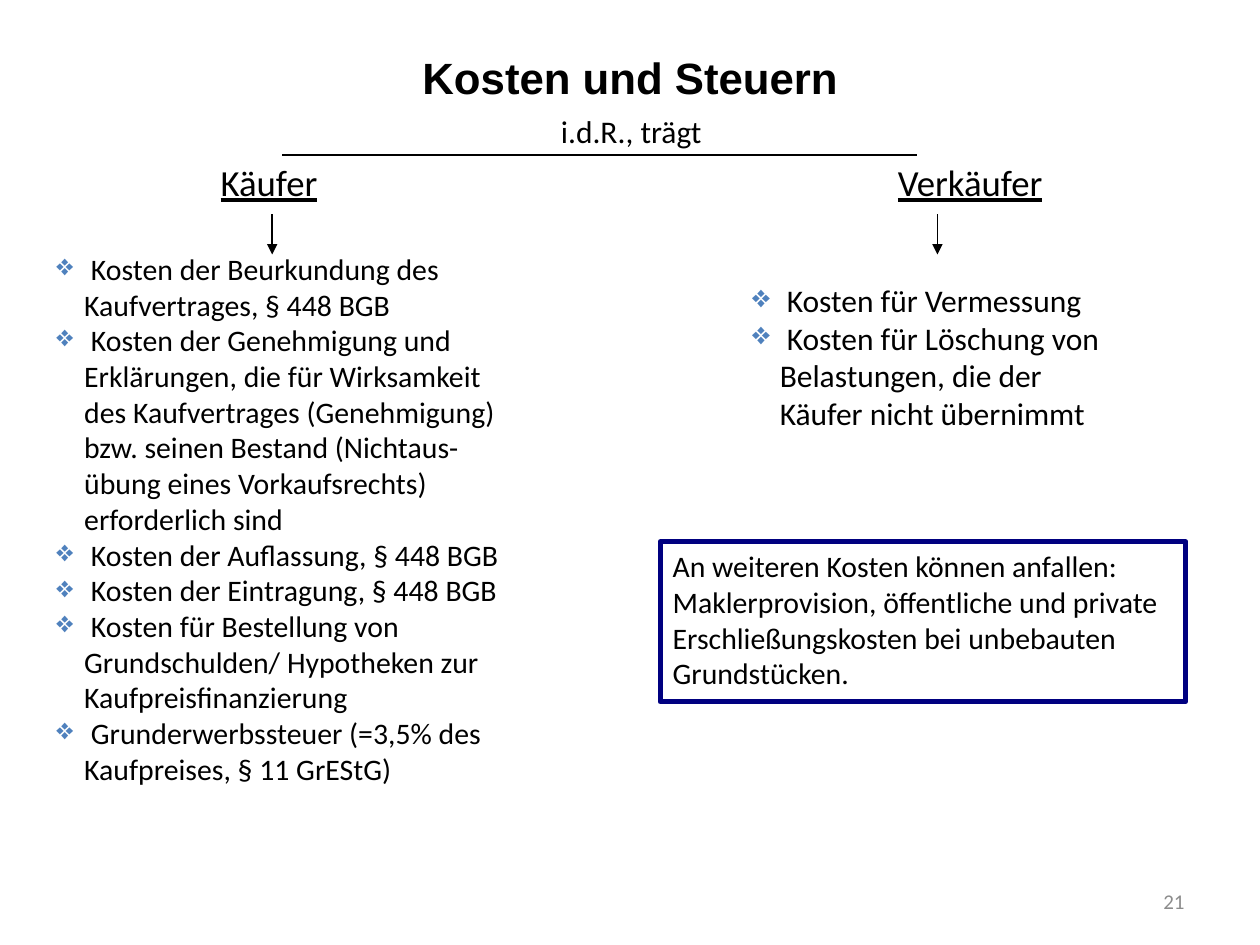
from lxml.etree import SubElement
from pptx import Presentation
from pptx.dml.color import RGBColor
from pptx.enum.shapes import MSO_CONNECTOR, MSO_SHAPE
from pptx.enum.text import MSO_ANCHOR, PP_ALIGN
from pptx.oxml.ns import qn
from pptx.util import Inches, Pt

COLORS = {"ink": "000000", "bullet": "4F81BD", "frame": "000080", "number": "8C8C8C"}
COLUMNS, ROWS = 100, 75

BUYER_COSTS = [
    ["Kosten der Beurkundung des", "Kaufvertrages, § 448 BGB"],
    ["Kosten der Genehmigung und", "Erklärungen, die für Wirksamkeit",
     "des Kaufvertrages (Genehmigung)", "bzw. seinen Bestand (Nichtaus-",
     "übung eines Vorkaufsrechts)", "erforderlich sind"],
    ["Kosten der Auflassung, § 448 BGB"],
    ["Kosten der Eintragung, § 448 BGB"],
    ["Kosten für Bestellung von", "Grundschulden/ Hypotheken zur",
     "Kaufpreisfinanzierung"],
    ["Grunderwerbssteuer (=3,5% des", "Kaufpreises, § 11 GrEStG)"],
]
SELLER_COSTS = [
    ["Kosten für Vermessung"],
    ["Kosten für Löschung von", "Belastungen, die der", "Käufer nicht übernimmt"],
]
FURTHER_COSTS = (
    "An weiteren Kosten können anfallen: Maklerprovision, öffentliche und private "
    "Erschließungskosten bei unbebauten Grundstücken."
)


class CostSlide:
    font = "Calibri"
    indent = Inches(0.22)

    def __init__(self, deck):
        self.column = deck.slide_width / COLUMNS
        self.row = deck.slide_height / ROWS
        self.shapes = deck.slides.add_slide(deck.slide_layouts[6]).shapes

    def place(self, left, top, width, height):
        return (round(left * self.column), round(top * self.row),
                round(width * self.column), round(height * self.row))

    def style(self, paragraph, size, color="ink", font=None, bold=False, underline=False):
        paragraph.font.name = font or self.font
        paragraph.font.size = Pt(size)
        paragraph.font.bold = bold
        paragraph.font.underline = underline
        paragraph.font.color.rgb = RGBColor.from_string(COLORS[color])

    def text(self, words, area, size, align=PP_ALIGN.CENTER, **look):
        frame = self.shapes.add_textbox(*self.place(*area)).text_frame
        frame.word_wrap = True
        frame.vertical_anchor = MSO_ANCHOR.MIDDLE
        paragraph = frame.paragraphs[0]
        paragraph.text = words
        paragraph.alignment = align
        self.style(paragraph, size, **look)

    def bullets(self, items, area, size):
        frame = self.shapes.add_textbox(*self.place(*area)).text_frame
        frame.word_wrap = True
        for index, lines in enumerate(items):
            paragraph = frame.add_paragraph() if index else frame.paragraphs[0]
            paragraph.text = " " + "\v".join(lines)
            self.style(paragraph, size)
            properties = paragraph._p.get_or_add_pPr()
            properties.set("marL", str(self.indent))
            properties.set("indent", str(-self.indent))
            bullet_color = SubElement(properties, qn("a:buClr"))
            SubElement(bullet_color, qn("a:srgbClr"), val=COLORS["bullet"])
            SubElement(properties, qn("a:buChar"), char="❖")
            properties.append(properties.find(qn("a:defRPr")))

    def line(self, start, end, arrow=False):
        x1, y1, x2, y2 = self.place(*start, *end)
        connector = self.shapes.add_connector(MSO_CONNECTOR.STRAIGHT, x1, y1, x2, y2)
        connector.line.width = Pt(0.75)
        connector.line.color.rgb = RGBColor.from_string(COLORS["ink"])
        if arrow:
            SubElement(connector.line._get_or_add_ln(), qn("a:tailEnd"), type="triangle")
        SubElement(connector._element.spPr, qn("a:effectLst"))

    def framed_note(self, words, area, size):
        note = self.shapes.add_shape(MSO_SHAPE.RECTANGLE, *self.place(*area))
        note.shadow.inherit = False
        note.fill.background()
        note.line.width = Pt(3)
        note.line.color.rgb = RGBColor.from_string(COLORS["frame"])
        frame = note.text_frame
        frame.word_wrap = True
        frame.vertical_anchor = MSO_ANCHOR.TOP
        paragraph = frame.paragraphs[0]
        paragraph.text = words
        paragraph.alignment = PP_ALIGN.LEFT
        self.style(paragraph, size)


def main():
    deck = Presentation()
    deck.slide_width, deck.slide_height = Inches(10), Inches(7.5)
    slide = CostSlide(deck)

    slide.text("Kosten und Steuern", (5, 3, 90, 6.2), 25, font="Arial", bold=True)
    slide.text("i.d.R., trägt", (5.1, 8.4, 90, 4), 18)
    slide.line((22.4, 12.3), (72.8, 12.3))
    for party, center, arrow_column in (("Käufer", 21.35, 21.6), ("Verkäufer", 77, 74.4)):
        slide.text(party, (center - 10, 12.2, 20, 4.4), 21, underline=True)
        slide.line((arrow_column, 17), (arrow_column, 20.2), arrow=True)

    slide.bullets(BUYER_COSTS, (3.5, 19.4, 41.7, 47.7), 17)
    slide.bullets(SELLER_COSTS, (58.7, 21.8, 33.1, 13), 18)
    slide.framed_note(FURTHER_COSTS, (52.4, 43, 41.7, 12.7), 17)
    slide.text("21", (71.7, 69.5, 23.3, 4), 12, align=PP_ALIGN.RIGHT, color="number")

    deck.save("out.pptx")


if __name__ == "__main__":
    main()
